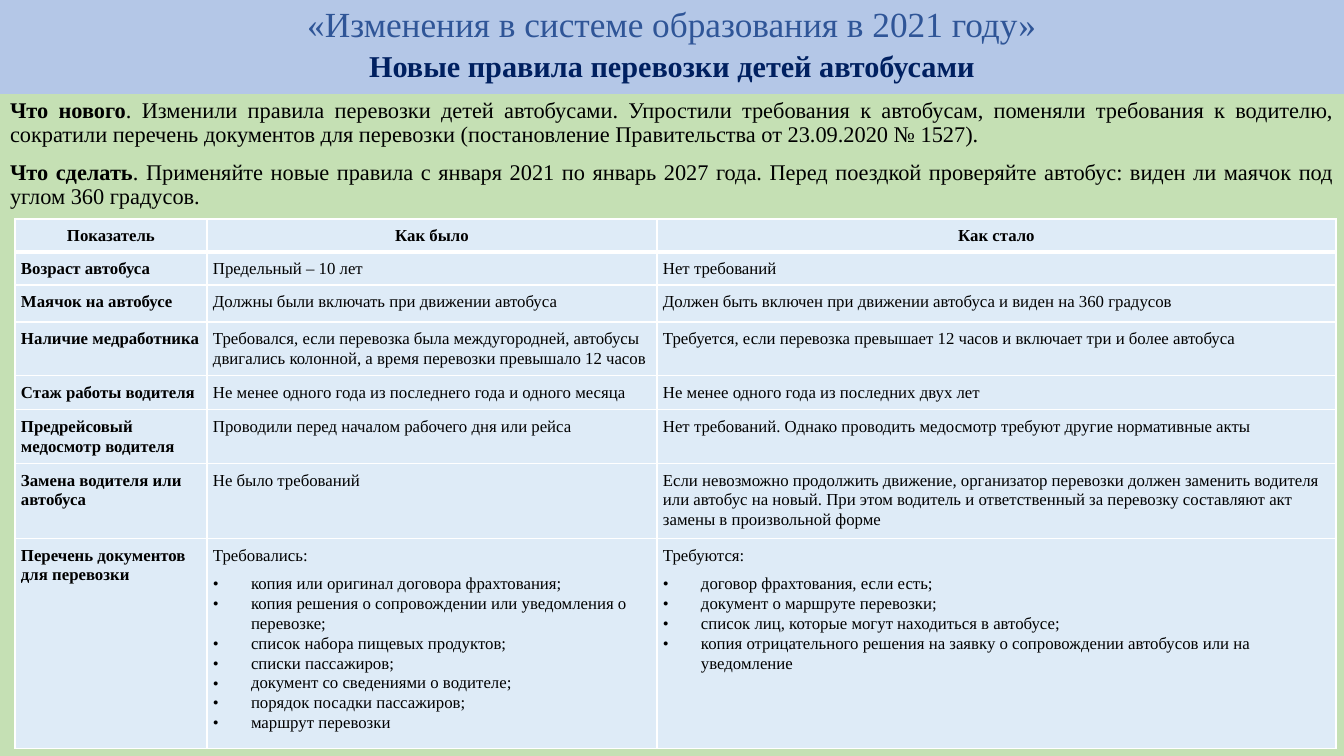
from lxml import etree
from pptx import Presentation
from pptx import util as u
from pptx.dml.color import RGBColor
from pptx.enum import shapes, text
from pptx.oxml import ns

# Content
HEADING = [
    ("«Изменения в системе образования в 2021 году»", 25.2, "2F5597", False),
    ("Новые правила перевозки детей автобусами", 21.6, "002060", True),
]
SUMMARY = [
    ("Что нового", ". Изменили правила перевозки детей автобусами. Упростили требования к автобусам, "
     "поменяли требования к водителю, сократили перечень документов для перевозки "
     "(постановление Правительства от 23.09.2020 № 1527)."),
    ("Что сделать", ". Применяйте новые правила с января 2021 по январь 2027 года. "
     "Перед поездкой проверяйте автобус: виден ли маячок под углом 360 градусов."),
]
# Each cell is a list of lines; lines after the first are bullets
RULES = [
    (["Показатель"], ["Как было"], ["Как стало"]),
    (["Возраст автобуса"], ["Предельный – 10 лет"], ["Нет требований"]),
    (["Маячок на автобусе"], ["Должны были включать при движении автобуса"],
     ["Должен быть включен при движении автобуса и виден на 360 градусов"]),
    (["Наличие медработника"],
     ["Требовался, если перевозка была междугородней, автобусы двигались колонной, "
      "а время перевозки превышало 12 часов"],
     ["Требуется, если перевозка превышает 12 часов и включает три и более автобуса"]),
    (["Стаж работы водителя"], ["Не менее одного года из последнего года и одного месяца"],
     ["Не менее одного года из последних двух лет"]),
    (["Предрейсовый медосмотр водителя"], ["Проводили перед началом рабочего дня или рейса"],
     ["Нет требований. Однако проводить медосмотр требуют другие нормативные акты"]),
    (["Замена водителя или автобуса"], ["Не было требований"],
     ["Если невозможно продолжить движение, организатор перевозки должен заменить водителя "
      "или автобус на новый. При этом водитель и ответственный за перевозку составляют акт "
      "замены в произвольной форме"]),
    (["Перечень документов для перевозки"],
     ["Требовались:", "копия или оригинал договора фрахтования;",
      "копия решения о сопровождении или уведомления о перевозке;",
      "список набора пищевых продуктов;", "списки пассажиров;",
      "документ со сведениями о водителе;", "порядок посадки пассажиров;", "маршрут перевозки"],
     ["Требуются:", "договор фрахтования, если есть;", "документ о маршруте перевозки;",
      "список лиц, которые могут находиться в автобусе;",
      "копия отрицательного решения на заявку о сопровождении автобусов или на уведомление"]),
]
COLUMNS = [192, 450, 679]
ROWS = [33, 33, 37, 54, 34, 54, 75, 210]
WIDTH, HEIGHT, HEADING_HEIGHT = 1344, 756, 94
FONT = "Times New Roman"


def px(n):
    return u.Emu(round(n * 914400 / 100.8))


def color(value):
    return RGBColor.from_string(value)


def add_run(paragraph, words, size, shade="000000", bold=False):
    run = paragraph.add_run()
    run.text = words
    run.font.name, run.font.size, run.font.bold = FONT, u.Pt(size), bold
    run.font.color.rgb = color(shade)


def paragraphs(frame, items):
    for i, item in enumerate(items):
        yield (frame.add_paragraph() if i else frame.paragraphs[0]), item


def add_band(top, height, fill, inset):
    band = slide.shapes.add_shape(shapes.MSO_SHAPE.RECTANGLE, 0, px(top), px(WIDTH), px(height))
    band.shadow.inherit = False
    band.fill.solid()
    band.fill.fore_color.rgb = color(fill)
    band.line.fill.background()
    frame = band.text_frame
    frame.word_wrap = True
    frame.vertical_anchor = text.MSO_ANCHOR.TOP
    frame.margin_left = frame.margin_right = px(10)
    frame.margin_top = frame.margin_bottom = px(inset)
    return frame


def add_bullet(paragraph):
    props = paragraph._p.get_or_add_pPr()
    props.set("marL", str(px(38)))
    props.set("indent", str(px(-38)))
    etree.SubElement(props, ns.qn("a:buFont")).set("typeface", FONT)
    etree.SubElement(props, ns.qn("a:buChar")).set("char", "•")


def add_borders(cell, bottom):
    props = cell._tc.get_or_add_tcPr()
    for i, (side, points) in enumerate([("L", 1), ("R", 1), ("T", 1), ("B", bottom)]):
        line = etree.Element(ns.qn("a:ln" + side), w=str(u.Pt(points)))
        fill = etree.SubElement(line, ns.qn("a:solidFill"))
        etree.SubElement(fill, ns.qn("a:srgbClr")).set("val", "FFFFFF")
        props.insert(i, line)


prs = Presentation()
prs.slide_width, prs.slide_height = px(WIDTH), px(HEIGHT)
slide = prs.slides.add_slide(prs.slide_layouts[6])

# Heading band
heading = add_band(0, HEADING_HEIGHT, "B4C7E7", 2)
for paragraph, (words, size, shade, bold) in paragraphs(heading, HEADING):
    paragraph.alignment = text.PP_ALIGN.CENTER
    paragraph.space_before = u.Pt(2)
    add_run(paragraph, words, size, shade, bold)

# Summary on the green background
summary = add_band(HEADING_HEIGHT, HEIGHT - HEADING_HEIGHT, "C5E0B4", 5)
for paragraph, (lead, words) in paragraphs(summary, SUMMARY):
    paragraph.alignment = text.PP_ALIGN.JUSTIFY
    paragraph.line_spacing = 0.9
    paragraph.space_before = u.Pt(10)
    add_run(paragraph, lead, 16, bold=True)
    add_run(paragraph, words, 16)

# Table of rules before and after
rules = slide.shapes.add_table(len(ROWS), len(COLUMNS), px(15), px(219),
                               px(sum(COLUMNS)), px(sum(ROWS))).table
rules.horz_banding = False
for column, width in zip(rules.columns, COLUMNS):
    column.width = px(width)
for r, (height, row) in enumerate(zip(ROWS, RULES)):
    rules.rows[r].height = px(height)
    for c, lines in enumerate(row):
        cell = rules.cell(r, c)
        cell.margin_left = cell.margin_right = cell.margin_top = cell.margin_bottom = px(6)
        cell.fill.solid()
        cell.fill.fore_color.rgb = color("DEEBF7")
        add_borders(cell, 1 if r else 3)
        for paragraph, (n, words) in paragraphs(cell.text_frame, enumerate(lines)):
            paragraph.alignment = text.PP_ALIGN.LEFT if r else text.PP_ALIGN.CENTER
            paragraph.line_spacing = 1.07
            paragraph.space_after = u.Pt(0 if n else 6)
            if n:
                add_bullet(paragraph)
            add_run(paragraph, words, 12, bold=r == 0 or c == 0)

prs.save("out.pptx")
